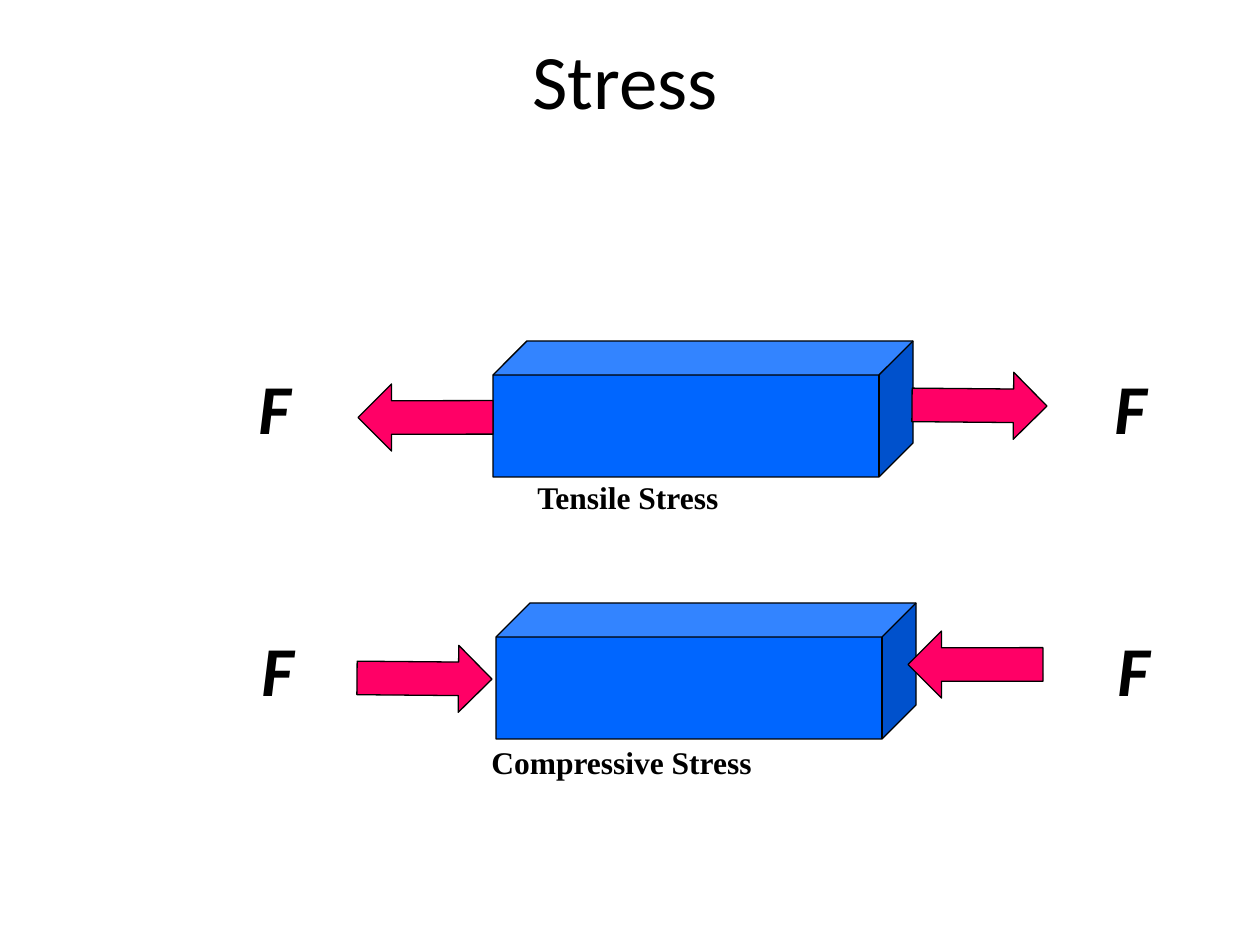
from dataclasses import dataclass

from pptx import Presentation
from pptx.dml.color import RGBColor
from pptx.enum.shapes import MSO_SHAPE
from pptx.enum.text import MSO_ANCHOR, MSO_AUTO_SIZE, PP_ALIGN
from pptx.util import Pt

EMU_PER_PX = 914400 / 126


@dataclass(frozen=True)
class Theme:
    """Colours, fonts and type sizes of the slide."""
    ink: RGBColor = RGBColor(0x00, 0x00, 0x00)
    block: RGBColor = RGBColor(0x00, 0x66, 0xFF)
    arrow: RGBColor = RGBColor(0xFF, 0x00, 0x66)
    sans: str = "Calibri"
    serif: str = "Times New Roman"
    title_size: int = 44
    force_size: int = 40
    caption_size: int = 18
    line_width: float = 0.75


THEME = Theme()


@dataclass(frozen=True)
class Box:
    """A rectangle in px."""
    left: int
    top: int
    width: int
    height: int

    def inner(self, left, top, width, height):
        """Return a box placed relative to this one."""
        return Box(self.left + left, self.top + top, width, height)

    def emu(self):
        """Return left, top, width and height in EMU."""
        return [round(value * EMU_PER_PX)
                for value in (self.left, self.top, self.width, self.height)]


def add_text(page, box, text, font_name, size, bold=False, italic=False, wrap=True):
    """Add a one-paragraph text box and return its shape."""
    shape = page.shapes.add_textbox(*box.emu())
    frame = shape.text_frame
    frame.word_wrap = wrap
    para = frame.paragraphs[0]
    para.text = text
    para.font.name = font_name
    para.font.size = Pt(size)
    para.font.bold = bold
    para.font.italic = italic
    para.font.color.rgb = THEME.ink
    return shape


def add_solid(page, box, kind, color, rotation=0):
    """Add an outlined preset shape with a flat fill and return it."""
    shape = page.shapes.add_shape(kind, *box.emu())
    shape.shadow.inherit = False
    shape.fill.solid()
    shape.fill.fore_color.rgb = color
    shape.line.color.rgb = THEME.ink
    shape.line.width = Pt(THEME.line_width)
    shape.rotation = rotation
    return shape


def add_title(page, box, text):
    """Add the centred slide title."""
    frame = add_text(page, box, text, THEME.sans, THEME.title_size).text_frame
    frame.vertical_anchor = MSO_ANCHOR.MIDDLE
    frame.paragraphs[0].alignment = PP_ALIGN.CENTER


def add_arrow(page, box, points_right):
    """Add a force arrow that points right or left."""
    kind, rotation = ((MSO_SHAPE.RIGHT_ARROW, 0.5) if points_right
                      else (MSO_SHAPE.LEFT_ARROW, 359.9))
    add_solid(page, box, kind, THEME.arrow, rotation)


def add_stress_diagram(page, box, caption, caption_box, arrows):
    """Add a block with a force at each end and a caption below."""
    block = add_solid(page, box.inner(247, 0, 420, 136), MSO_SHAPE.CUBE, THEME.block)
    block.adjustments[0] = 0.25
    for left, top, points_right in arrows:
        add_arrow(page, box.inner(left, top, 135, 67), points_right)
    for left in (0, box.width - 68):
        force = add_text(page, box.inner(left, 17, 68, 97), "F", THEME.sans,
                         THEME.force_size, bold=True, italic=True, wrap=False)
        force.text_frame.auto_size = MSO_AUTO_SIZE.SHAPE_TO_FIT_TEXT
    label = add_text(page, box.inner(*caption_box), caption, THEME.serif,
                     THEME.caption_size, bold=True)
    label.text_frame.auto_size = MSO_AUTO_SIZE.SHAPE_TO_FIT_TEXT


def main():
    """Build the slide and save it."""
    deck = Presentation()
    deck.slide_width, deck.slide_height = Box(0, 0, 1260, 945).emu()[2:]
    page = deck.slides.add_slide(deck.slide_layouts[6])
    add_title(page, Box(53, 0, 1144, 158), "Stress")
    add_stress_diagram(page, Box(246, 341, 924, 203), "Tensile Stress",
                       (279, 131, 341, 72), [(666, 31, True), (112, 43, False)])
    add_stress_diagram(page, Box(249, 603, 924, 206), "Compressive Stress",
                       (230, 134, 465, 72), [(108, 42, True), (659, 28, False)])
    deck.save("out.pptx")


if __name__ == "__main__":
    main()
